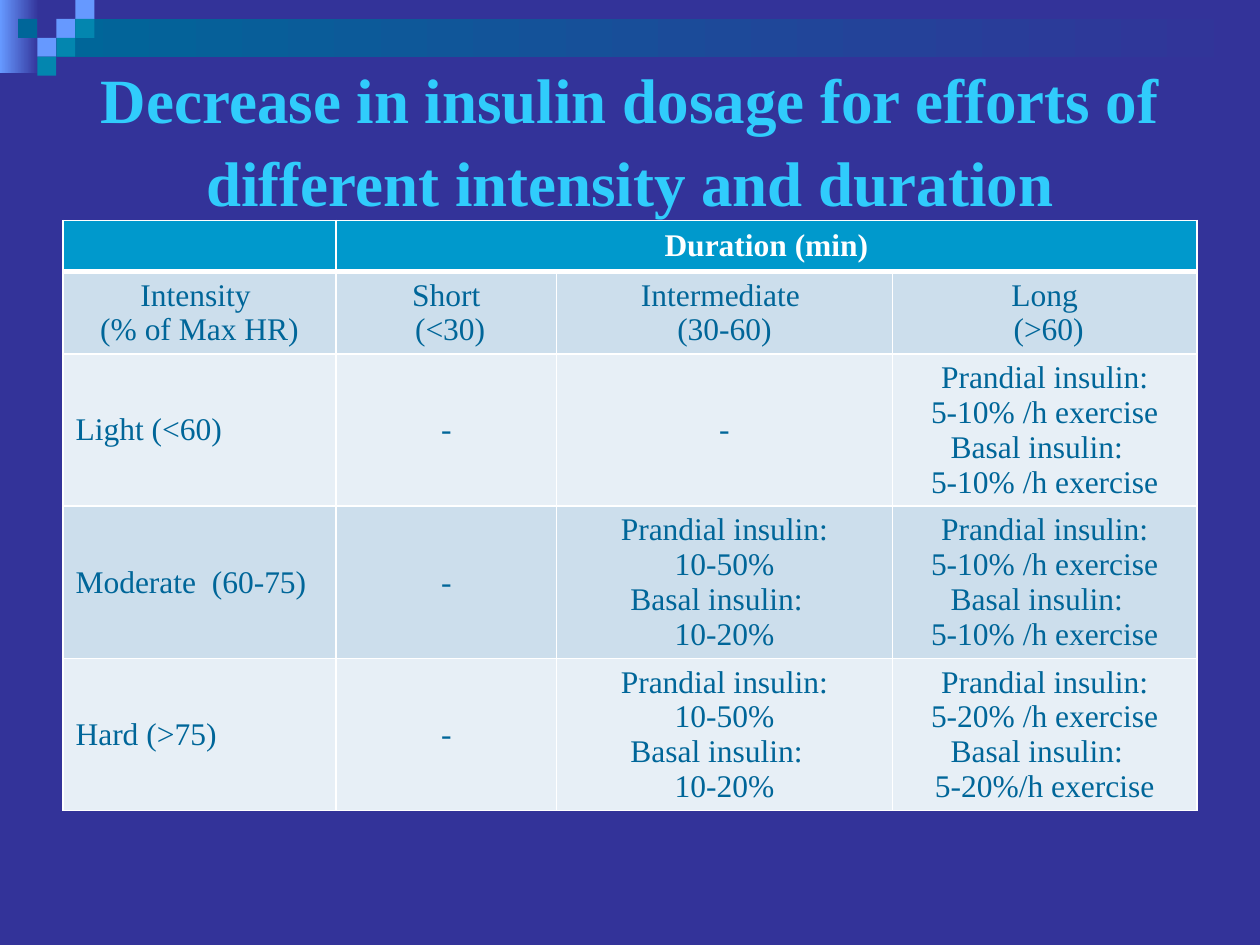
from lxml import etree
from pptx import Presentation
from pptx.dml.color import RGBColor
from pptx.enum.shapes import MSO_SHAPE
from pptx.enum.text import MSO_ANCHOR, MSO_AUTO_SIZE, PP_ALIGN
from pptx.oxml.ns import qn
from pptx.util import Pt

RECTANGLE = MSO_SHAPE.RECTANGLE
MIDDLE = MSO_ANCHOR.MIDDLE
NO_AUTOFIT = MSO_AUTO_SIZE.NONE
LEFT, CENTER = PP_ALIGN.LEFT, PP_ALIGN.CENTER

FONT = "Times New Roman"
NAVY, BLUE, TEAL, SEA = "333399", "6699FF", "006699", "0386AF"
HEADER, DARK_BAND, LIGHT_BAND, WHITE = "0099CC", "CCDEEC", "E7EFF6", "FFFFFF"

SQUARE = 10.8
MOSAIC = [(2, 1, BLUE), (3, 0, BLUE), (3, 1, SEA), (1, 2, BLUE),
          (0, 1, TEAL), (2, 2, SEA), (1, 3, SEA)]

COLUMN_WIDTHS = [156, 126, 192, 174]
ROW_HEIGHTS = [29, 47, 87, 87, 87]


def doses(prandial, basal):
    return f"Prandial insulin:\n{prandial}\nBasal insulin:  \n{basal}"


HOURLY = "5-10% /h exercise"
MEDIUM_DOSES = doses("10-50%", "10-20%")
DOSAGE_ROWS = [
    ["", "Duration (min)", "", ""],
    ["Intensity \n(% of Max HR)", "Short\n (<30)", "Intermediate \n(30-60)", "Long\n (>60)"],
    ["Light (<60)", "-", "-", doses(HOURLY, HOURLY)],
    ["Moderate  (60-75)", "-", MEDIUM_DOSES, doses(HOURLY, HOURLY)],
    ["Hard (>75)", "-", MEDIUM_DOSES, doses("5-20% /h exercise", "5-20%/h exercise")],
]


def rgb(value):
    return RGBColor.from_string(value)


def write(frame, text, size=18, color=TEAL, bold=False, align=CENTER, spacing=None):
    for index, line in enumerate(text.split("\n")):
        paragraph = frame.paragraphs[0] if index == 0 else frame.add_paragraph()
        paragraph.alignment = align
        paragraph.line_spacing = spacing
        run = paragraph.add_run()
        run.text = line
        run.font.name = FONT
        run.font.size = Pt(size)
        run.font.bold = bold
        run.font.color.rgb = rgb(color)


def add_block(slide, left, top, width, height, *colors):
    block = slide.shapes.add_shape(RECTANGLE, Pt(left), Pt(top), Pt(width), Pt(height))
    block.shadow.inherit = False
    block.line.fill.background()
    if len(colors) == 1:
        block.fill.solid()
        block.fill.fore_color.rgb = rgb(colors[0])
        return
    block.fill.gradient()
    block.fill.gradient_angle = 0
    for stop, color in zip(block.fill.gradient_stops, colors):
        stop.color.rgb = rgb(color)


def add_banner(slide):
    add_block(slide, 0, 0, 22.3, 41.8, BLUE, NAVY)
    add_block(slide, 32.4, SQUARE, 687.6, 21.6, TEAL, NAVY)
    for column, row, color in MOSAIC:
        add_block(slide, 10.4 + column * 10.9, row * SQUARE, SQUARE, SQUARE, color)


def set_title(slide, text):
    title = slide.shapes.title
    title.left, title.top, title.width, title.height = Pt(36), Pt(23.8), Pt(648), Pt(108)
    frame = title.text_frame
    frame.auto_size = NO_AUTOFIT
    frame.word_wrap = True
    frame.vertical_anchor = MIDDLE
    write(frame, text, size=36, color="30CCFC", bold=True, spacing=1.1)


def set_borders(cell, top=1, bottom=1):
    properties = cell._tc.get_or_add_tcPr()
    for side, width in (("L", 1), ("R", 1), ("T", top), ("B", bottom)):
        line = etree.SubElement(properties, qn(f"a:ln{side}"), w=str(Pt(width)))
        fill = etree.SubElement(line, qn("a:solidFill"))
        etree.SubElement(fill, qn("a:srgbClr"), val=WHITE)


def format_cell(cell, text, row, column):
    set_borders(cell, top=3 if row == 1 else 1, bottom=3 if row == 0 else 1)
    band = DARK_BAND if row % 2 else LIGHT_BAND
    cell.fill.solid()
    cell.fill.fore_color.rgb = rgb(HEADER if row == 0 else band)
    cell.vertical_anchor = MIDDLE
    if text:
        write(cell.text_frame, text, color=WHITE if row == 0 else TEAL, bold=row == 0,
              align=LEFT if column == 0 and row > 1 else CENTER)


def add_dosage_table(slide):
    table = slide.shapes.add_table(
        len(ROW_HEIGHTS), len(COLUMN_WIDTHS), Pt(36), Pt(126),
        Pt(sum(COLUMN_WIDTHS)), Pt(sum(ROW_HEIGHTS))).table
    for column, width in zip(table.columns, COLUMN_WIDTHS):
        column.width = Pt(width)
    for row, height in zip(table.rows, ROW_HEIGHTS):
        row.height = Pt(height)
    table.cell(0, 1).merge(table.cell(0, 3))
    for row, texts in enumerate(DOSAGE_ROWS):
        for column, text in enumerate(texts):
            format_cell(table.cell(row, column), text, row, column)


def main():
    deck = Presentation()
    deck.slide_width, deck.slide_height = Pt(720), Pt(540)
    slide = deck.slides.add_slide(deck.slide_layouts[5])
    slide.background.fill.solid()
    slide.background.fill.fore_color.rgb = rgb(NAVY)
    add_banner(slide)
    set_title(slide, "Decrease in insulin dosage for efforts of different intensity and duration")
    slide.shapes._spTree.append(slide.shapes.title._element)
    add_dosage_table(slide)
    deck.save("out.pptx")


if __name__ == "__main__":
    main()
